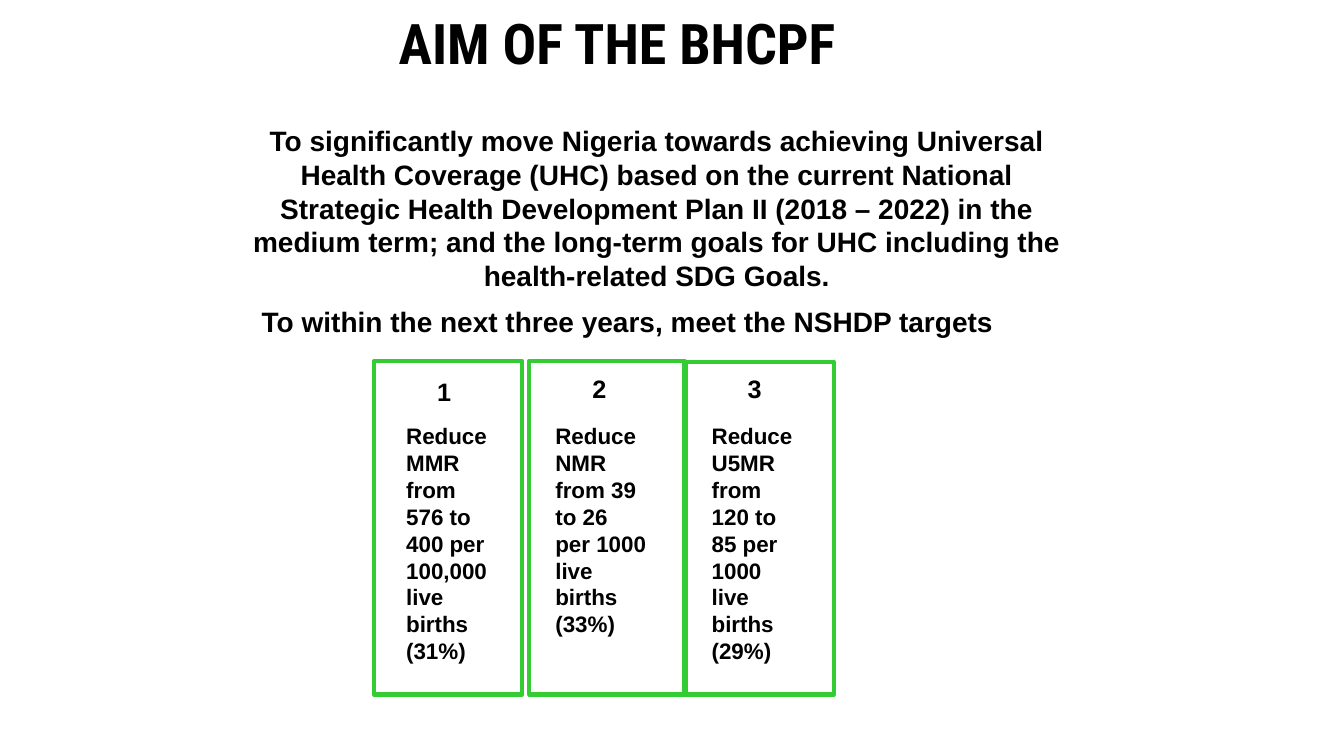
from pptx import Presentation
from pptx.dml.color import RGBColor
from pptx.enum.shapes import MSO_SHAPE as Shape
from pptx.enum.text import MSO_ANCHOR as Anchor, PP_ALIGN as Align
from pptx.util import Inches, Pt

TITLE = "AIM OF THE BHCPF"
AIM = ("To significantly move Nigeria towards achieving Universal Health Coverage (UHC) "
       "based on the current National Strategic Health Development Plan II (2018 – 2022) "
       "in the medium term; and the long-term goals for UHC including the health-related "
       "SDG Goals.")
LEAD_IN = "To within the next three years, meet the NSHDP targets"
# goal, card (left, top, width), left of goal text, left and top of number
TARGETS = [
    ("Reduce MMR from 576 to 400 per 100,000 live births (31%)",
     (3.71, 3.58, 1.47), 3.93, (4.23, 3.68)),
    ("Reduce NMR from 39 to 26 per 1000 live births (33%)",
     (5.25, 3.58, 1.54), 5.41, (5.77, 3.65)),
    ("Reduce U5MR from 120 to 85 per 1000 live births (29%)",
     (6.8, 3.59, 1.47), 6.96, (7.31, 3.65)),
]
CARD_BOTTOM = 6.89
GOAL_TOP, GOAL_WIDTH, GOAL_HEIGHT = 4.14, 1.11, 2.52
NUMBER_SIZE = (0.35, 0.4)
BLACK, GREEN = "000000", "33CC33"


def color(hex_code):
    return RGBColor.from_string(hex_code)


def write(frame, text, size, align=Align.CENTER, name="Arial", anchor=Anchor.TOP):
    frame.word_wrap = True
    frame.vertical_anchor = anchor
    paragraph = frame.paragraphs[0]
    paragraph.alignment = align
    run = paragraph.add_run()
    run.text = text
    for key, value in {"name": name, "size": Pt(size), "bold": True}.items():
        setattr(run.font, key, value)
    run.font.color.rgb = color(BLACK)


def add_text(slide, place, text, size, align=Align.CENTER):
    box = slide.shapes.add_textbox(*map(Inches, place))
    write(box.text_frame, text, size, align)


def add_card(slide, left, top, width):
    card = slide.shapes.add_shape(
        Shape.RECTANGLE, *map(Inches, (left, top, width, CARD_BOTTOM - top)))
    card.shadow.inherit = False
    card.fill.background()
    card.line.color.rgb = color(GREEN)
    card.line.width = Pt(3)


def main():
    deck = Presentation()
    deck.slide_width, deck.slide_height = Inches(13.33), Inches(7.5)
    slide = deck.slides.add_slide(deck.slide_layouts[5])

    title = slide.shapes.title
    title.left, title.top, title.width, title.height = map(Inches, (1.72, 0.03, 8.8, 0.77))
    write(title.text_frame, TITLE, 40, name="Roboto Condensed", anchor=Anchor.MIDDLE)

    add_text(slide, (2.35, 1.18, 8.33, 1.45), AIM, 20)
    add_text(slide, (2.14, 2.97, 8.17, 0.44), LEAD_IN, 20)

    for _, card, _, _ in TARGETS:
        add_card(slide, *card)
    for number, (goal, _, goal_left, number_at) in enumerate(TARGETS, 1):
        add_text(slide, number_at + NUMBER_SIZE, str(number), 18)
        add_text(slide, (goal_left, GOAL_TOP, GOAL_WIDTH, GOAL_HEIGHT), goal, 16, Align.LEFT)

    deck.save("out.pptx")


if __name__ == "__main__":
    main()
